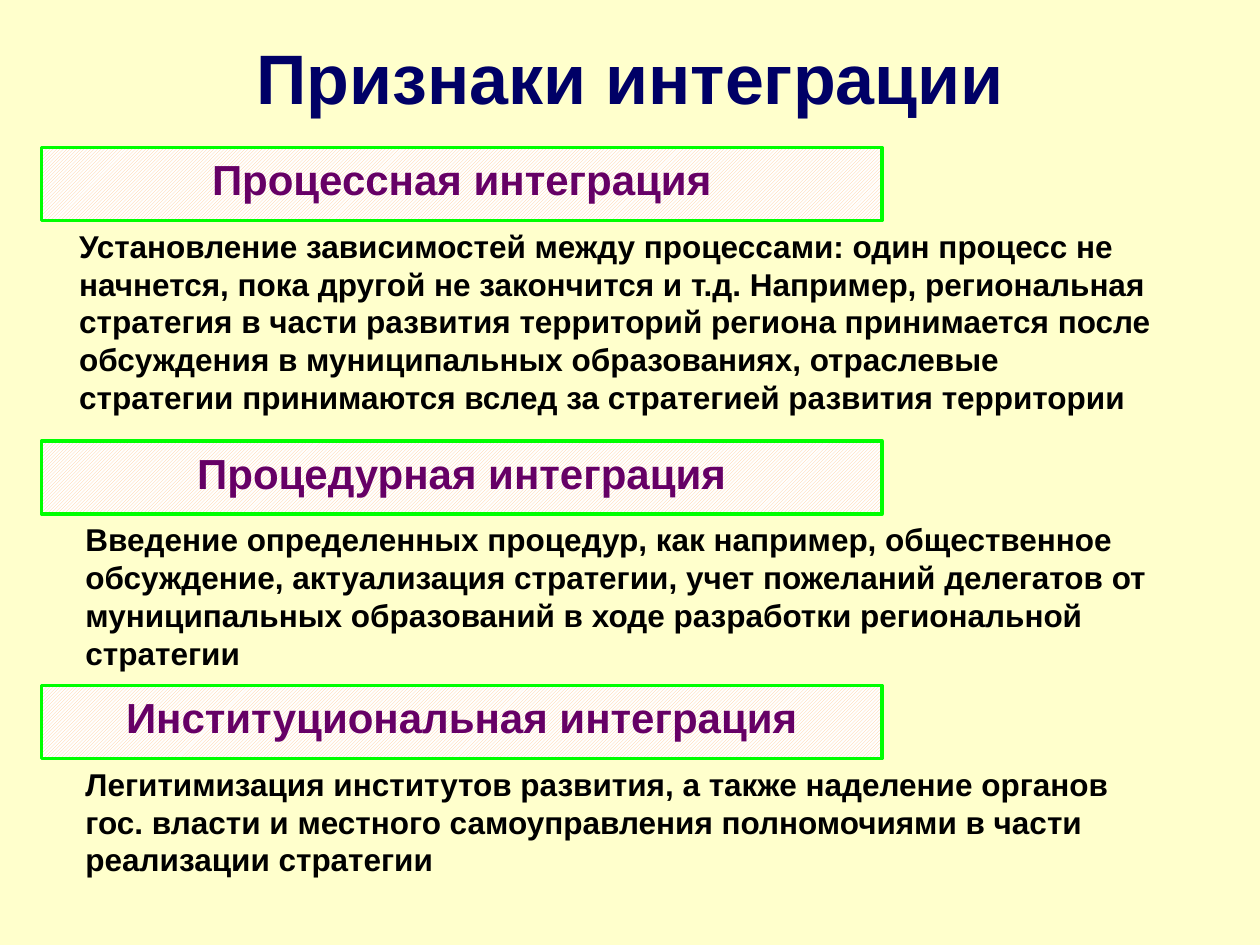
import pptx
import pptx.util
import pptx.dml.color
import pptx.enum.dml
import pptx.enum.shapes
import pptx.enum.text

Inches = pptx.util.Inches
Pt = pptx.util.Pt
Align = pptx.enum.text.PP_ALIGN
Anchor = pptx.enum.text.MSO_ANCHOR
Fit = pptx.enum.text.MSO_AUTO_SIZE


def tint(code):
    return pptx.dml.color.RGBColor.from_string(code)


THEME = {
    "font": "Arial",
    "page": tint("FFFFCC"),
    "hatch": tint("FFCC99"),
    "base": tint("FFFFFF"),
    "edge": tint("00FF00"),
    "title": {"size": Pt(40), "color": tint("000066")},
    "head": {"size": Pt(24), "color": tint("660066")},
    "body": {"size": Pt(18), "color": tint("000000")},
}

PARTS = [
    (1.17, 0.53, 1.62, "Процессная интеграция",
     "Установление зависимостей между процессами: один процесс не начнется, "
     "пока другой не закончится и т.д. Например, региональная стратегия в части "
     "развития территорий региона принимается после обсуждения в муниципальных "
     "образованиях, отраслевые стратегии принимаются вслед за стратегией "
     "развития территории"),
    (3.5, 0.58, 1.31, "Процедурная интеграция",
     "Введение определенных процедур, как например, общественное обсуждение, "
     "актуализация стратегии, учет пожеланий делегатов от муниципальных "
     "образований в ходе разработки региональной стратегии"),
    (5.44, 0.58, 1.01, "Институциональная интеграция",
     "Легитимизация институтов развития, а также наделение органов гос. власти "
     "и местного самоуправления полномочиями в части реализации стратегии"),
]
BAR = 0.58


class Deck:
    def __init__(self, theme, slide):
        self.theme = theme
        self.slide = slide
        fill = slide.background.fill
        fill.solid()
        fill.fore_color.rgb = theme["page"]

    def letter(self, shape, text, style, frame, para):
        block = shape.text_frame
        line = block.paragraphs[0]
        run = line.add_run()
        run.text = text
        look = self.theme[style]
        face = {"name": self.theme["font"], "size": look["size"], "bold": True}
        frame = {"word_wrap": True, **frame}
        for thing, values in ((block, frame), (line, para), (run.font, face)):
            for key, value in values.items():
                setattr(thing, key, value)
        run.font.color.rgb = look["color"]

    def label(self, box, text, style, frame, para):
        shape = self.slide.shapes.add_textbox(*map(Inches, box))
        self.letter(shape, text, style, frame, para)

    def title(self, box, text):
        self.label(box, text, "title", {"vertical_anchor": Anchor.MIDDLE},
                   {"alignment": Align.CENTER})

    def body(self, box, text):
        self.label(box, text, "body", {"auto_size": Fit.SHAPE_TO_FIT_TEXT},
                   {"alignment": Align.LEFT, "line_spacing": Pt(21.6)})

    def head(self, box, text):
        kind = pptx.enum.shapes.MSO_SHAPE.RECTANGLE
        shape = self.slide.shapes.add_shape(kind, *map(Inches, box))
        shape.shadow.inherit = False
        fill = shape.fill
        fill.patterned()
        fill.pattern = pptx.enum.dml.MSO_PATTERN.LIGHT_UPWARD_DIAGONAL
        fill.fore_color.rgb = self.theme["hatch"]
        fill.back_color.rgb = self.theme["base"]
        shape.line.color.rgb = self.theme["edge"]
        shape.line.width = Pt(2)
        self.letter(shape, text, "head", {"vertical_anchor": Anchor.TOP},
                    {"alignment": Align.CENTER, "space_before": Pt(2.5)})


def main():
    show = pptx.Presentation()
    show.slide_width = Inches(10)
    show.slide_height = Inches(7.5)
    deck = Deck(THEME, show.slides.add_slide(show.slide_layouts[6]))
    deck.title((0, 0.17, 10, 0.87), "Признаки интеграции")
    for top, left, high, head, body in PARTS:
        deck.head((0.33, top, 6.67, BAR), head)
        deck.body((left, top + BAR, 8.75, high), body)
    show.save("out.pptx")


if __name__ == "__main__":
    main()
